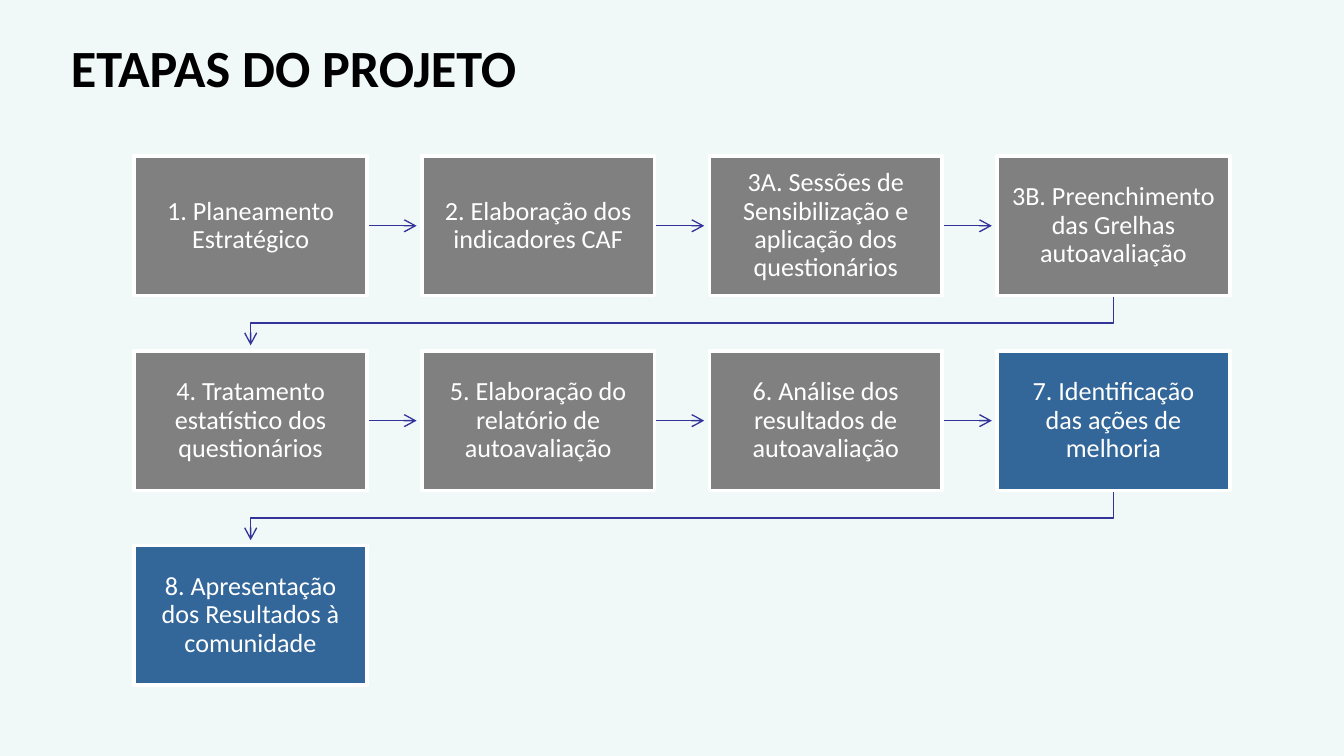
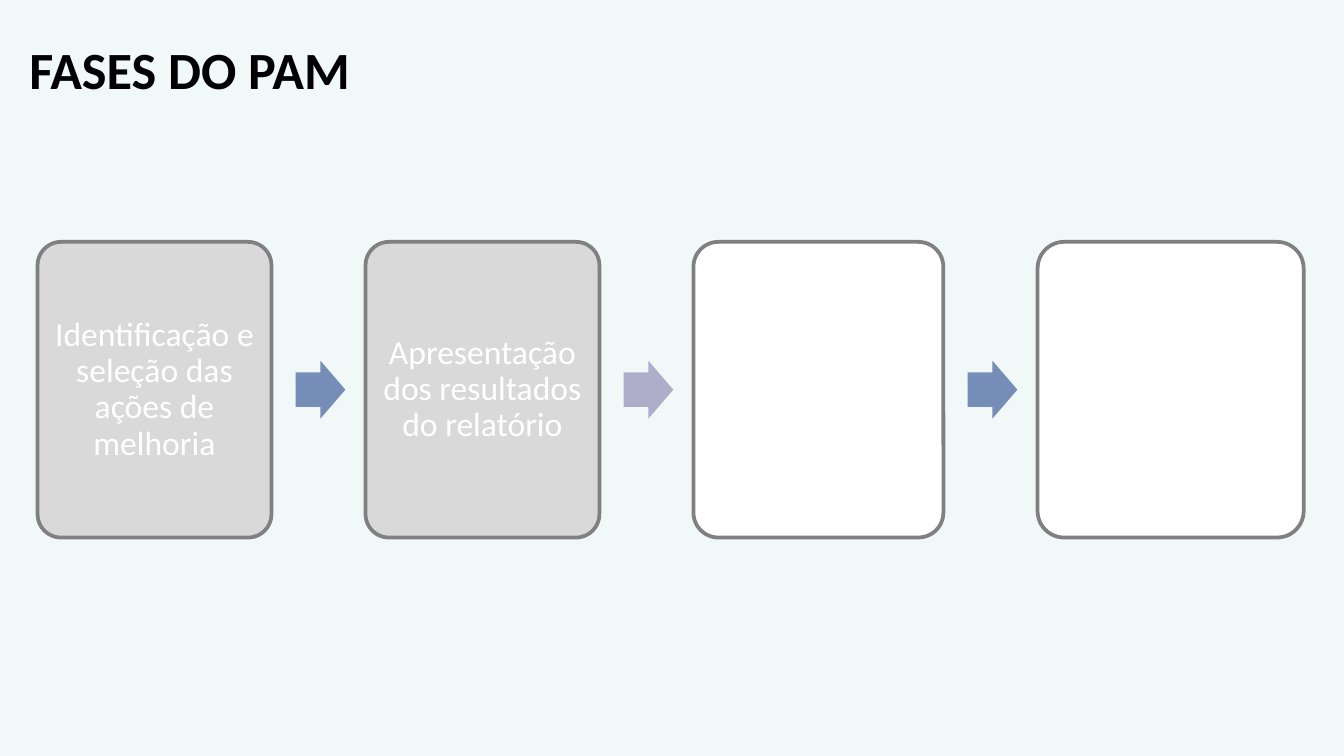
from dataclasses import dataclass
from itertools import accumulate

from lxml import etree
from pptx import Presentation
from pptx.dml.color import RGBColor
from pptx.enum.shapes import MSO_CONNECTOR, MSO_SHAPE
from pptx.enum.text import MSO_ANCHOR, PP_ALIGN
from pptx.oxml.ns import qn
from pptx.shapes.base import BaseShape
from pptx.slide import Slide
from pptx.util import Inches, Pt

RECTANGLE = MSO_SHAPE.RECTANGLE
ROUNDED_RECTANGLE = MSO_SHAPE.ROUNDED_RECTANGLE
RIGHT_ARROW = MSO_SHAPE.RIGHT_ARROW
STRAIGHT = MSO_CONNECTOR.STRAIGHT
CENTER, LEFT = PP_ALIGN.CENTER, PP_ALIGN.LEFT
MIDDLE, TOP = MSO_ANCHOR.MIDDLE, MSO_ANCHOR.TOP

BACKGROUND = RGBColor(0xF0, 0xF9, 0xF8)
BLACK = RGBColor(0x00, 0x00, 0x00)
WHITE = RGBColor(0xFF, 0xFF, 0xFF)
GRAY = RGBColor(0x80, 0x80, 0x80)
LIGHT_GRAY = RGBColor(0xD9, 0xD9, 0xD9)
BLUE = RGBColor(0x33, 0x66, 0x99)
INDIGO = RGBColor(0x33, 0x33, 0x99)
ARROW_BLUE = RGBColor(0x76, 0x8D, 0xB7)
ARROW_LILAC = RGBColor(0xAE, 0xAE, 0xCA)

SLIDE_WIDTH = Inches(10)
SLIDE_HEIGHT = SLIDE_WIDTH * 9 // 16
FONT = "Calibri"
TITLE_HEIGHT = 0.94
OUTLINE_WIDTH = 2
FLOW_LINE_WIDTH = 0.75
FLOW_REACH = 0.37


@dataclass(frozen=True)
class Box:
    left: float
    top: float
    width: float
    height: float

    @property
    def right(self) -> float:
        return self.left + self.width

    @property
    def bottom(self) -> float:
        return self.top + self.height

    @property
    def center_x(self) -> float:
        return self.left + self.width / 2

    @property
    def center_y(self) -> float:
        return self.top + self.height / 2

    def lengths(self) -> list[int]:
        return [Inches(value) for value in (self.left, self.top, self.width, self.height)]


@dataclass(frozen=True)
class Grid:
    left: float
    top: float
    cell_width: float
    cell_height: float
    column_gap: float
    row_gap: float
    columns: int

    def cell(self, index: int) -> Box:
        row, column = divmod(index, self.columns)
        return Box(
            self.left + column * (self.cell_width + self.column_gap),
            self.top + row * (self.cell_height + self.row_gap),
            self.cell_width,
            self.cell_height,
        )


@dataclass(frozen=True)
class TextStyle:
    size: float
    color: RGBColor = WHITE
    bold: bool = False
    alignment: PP_ALIGN = CENTER
    anchor: MSO_ANCHOR = MIDDLE
    line_spacing: float = 0.9
    margin_x: float = 0.1
    margin_y: float = 0.1


@dataclass(frozen=True)
class Step:
    text: str
    fill: RGBColor = GRAY


@dataclass(frozen=True)
class Phase:
    width: float
    fill: RGBColor
    text: str = ""
    arrow: RGBColor | None = None


TITLE_STYLE = TextStyle(28, BLACK, True, LEFT, TOP, 1, 0.1, 0.05)
STEP_STYLE = TextStyle(14, margin_x=0.11, margin_y=0.11)
PHASE_STYLE = TextStyle(18, margin_x=0.07, margin_y=0.07)

STEP_GRID = Grid(1, 1.16, 1.73, 1.04, 0.41, 0.41, 4)
STEPS = [
    Step("1. Planeamento Estratégico"),
    Step("2. Elaboração dos indicadores CAF"),
    Step("3A. Sessões de Sensibilização e aplicação dos questionários"),
    Step("3B. Preenchimento das Grelhas autoavaliação"),
    Step("4. Tratamento estatístico dos questionários"),
    Step("5. Elaboração do relatório de autoavaliação"),
    Step("6. Análise dos resultados de autoavaliação"),
    Step("7. Identificação das ações de melhoria", BLUE),
    Step("8. Apresentação dos Resultados à comunidade", BLUE),
]

PHASE_LEFT, PHASE_TOP, PHASE_HEIGHT, PHASE_GAP = 0.28, 1.8, 2.2, 0.7
PHASE_ARROW_OFFSET, PHASE_ARROW_WIDTH, PHASE_ARROW_HEIGHT = 0.18, 0.37, 0.43
PHASES = [
    Phase(1.74, LIGHT_GRAY, "Identificação e seleção das ações de melhoria", ARROW_BLUE),
    Phase(1.74, LIGHT_GRAY, "Apresentação dos resultados do relatório", ARROW_LILAC),
    Phase(1.86, WHITE, arrow=ARROW_BLUE),
    Phase(1.98, WHITE),
]


def set_attributes(target: object, values: dict[str, object]) -> None:
    for name, value in values.items():
        setattr(target, name, value)


def write_text(shape: BaseShape, text: str, style: TextStyle) -> None:
    frame = shape.text_frame
    set_attributes(frame, {
        "word_wrap": True,
        "vertical_anchor": style.anchor,
        "margin_left": Inches(style.margin_x),
        "margin_right": Inches(style.margin_x),
        "margin_top": Inches(style.margin_y),
        "margin_bottom": Inches(style.margin_y),
    })
    paragraph = frame.paragraphs[0]
    set_attributes(paragraph, {
        "alignment": style.alignment,
        "line_spacing": style.line_spacing,
    })
    run = paragraph.add_run()
    run.text = text
    set_attributes(run.font, {"name": FONT, "size": Pt(style.size), "bold": style.bold})
    run.font.color.rgb = style.color


def add_block(
    slide: Slide,
    kind: MSO_SHAPE,
    box: Box,
    fill: RGBColor,
    outline: RGBColor | None = None,
    adjustments: tuple[float, ...] = (),
) -> BaseShape:
    shape = slide.shapes.add_shape(kind, *box.lengths())
    shape.shadow.inherit = False
    shape.fill.solid()
    shape.fill.fore_color.rgb = fill
    if outline is None:
        shape.line.fill.background()
    else:
        shape.line.color.rgb = outline
        shape.line.width = Pt(OUTLINE_WIDTH)
    for index, value in enumerate(adjustments):
        shape.adjustments[index] = value
    return shape


def style_flow_line(shape: BaseShape) -> None:
    shape.line.color.rgb = INDIGO
    shape.line.width = Pt(FLOW_LINE_WIDTH)
    properties = shape.element.spPr
    etree.SubElement(properties.find(qn("a:ln")), qn("a:tailEnd"), type="arrow")
    if properties.find(qn("a:effectLst")) is None:
        etree.SubElement(properties, qn("a:effectLst"))


def add_flow(slide: Slide, source: Box, target: Box) -> None:
    if source.top == target.top:
        start_x, end_x, y = map(
            Inches, (source.right, source.right + FLOW_REACH, source.center_y)
        )
        style_flow_line(slide.shapes.add_connector(STRAIGHT, start_x, y, end_x, y))
        return
    turn_y = (source.bottom + target.top) / 2
    corners = [
        (source.center_x, source.bottom),
        (source.center_x, turn_y),
        (target.center_x, turn_y),
        (target.center_x, source.bottom + FLOW_REACH),
    ]
    points = [(Inches(x), Inches(y)) for x, y in corners]
    builder = slide.shapes.build_freeform(*points[0])
    builder.add_line_segments(points[1:], close=False)
    shape = builder.convert_to_shape()
    shape.fill.background()
    shape.shadow.inherit = False
    style_flow_line(shape)


def add_titled_slide(presentation: Presentation, title: str, box: Box) -> Slide:
    slide = presentation.slides.add_slide(presentation.slide_layouts[6])
    slide.background.fill.solid()
    slide.background.fill.fore_color.rgb = BACKGROUND
    write_text(slide.shapes.add_textbox(*box.lengths()), title, TITLE_STYLE)
    return slide


def build_steps(presentation: Presentation) -> None:
    title_box = Box(0.43, 0.21, 9.57, TITLE_HEIGHT)
    slide = add_titled_slide(presentation, "ETAPAS DO PROJETO", title_box)
    for index, step in enumerate(STEPS):
        box = STEP_GRID.cell(index)
        if index < len(STEPS) - 1:
            add_flow(slide, box, STEP_GRID.cell(index + 1))
        shape = add_block(slide, RECTANGLE, box, step.fill, WHITE)
        write_text(shape, step.text, STEP_STYLE)


def build_phases(presentation: Presentation) -> None:
    title_box = Box(0.12, 0.23, 9.45, TITLE_HEIGHT)
    slide = add_titled_slide(presentation, "FASES DO PAM", title_box)
    lefts = accumulate((phase.width + PHASE_GAP for phase in PHASES), initial=PHASE_LEFT)
    for phase, left in zip(PHASES, lefts):
        box = Box(left, PHASE_TOP, phase.width, PHASE_HEIGHT)
        shape = add_block(slide, ROUNDED_RECTANGLE, box, phase.fill, GRAY, (0.1,))
        if phase.text:
            write_text(shape, phase.text, PHASE_STYLE)
        if phase.arrow is not None:
            arrow_box = Box(
                box.right + PHASE_ARROW_OFFSET,
                box.center_y - PHASE_ARROW_HEIGHT / 2,
                PHASE_ARROW_WIDTH,
                PHASE_ARROW_HEIGHT,
            )
            add_block(slide, RIGHT_ARROW, arrow_box, phase.arrow, adjustments=(0.6, 0.5))


def main() -> None:
    presentation = Presentation()
    presentation.slide_width = SLIDE_WIDTH
    presentation.slide_height = SLIDE_HEIGHT
    build_steps(presentation)
    build_phases(presentation)
    presentation.save("out.pptx")


if __name__ == "__main__":
    main()
